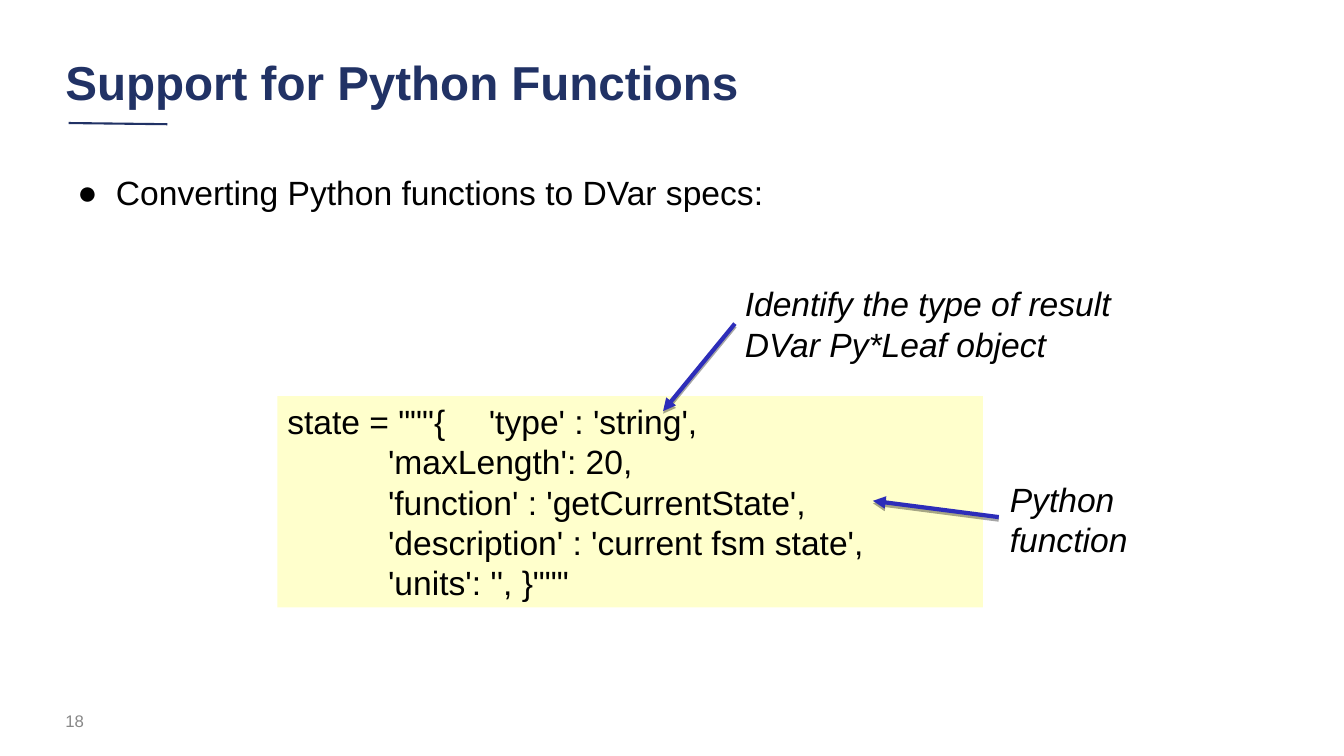
from lxml import etree
from pptx import Presentation
from pptx import util as u
from pptx.dml.color import RGBColor
from pptx.enum import shapes, text
from pptx.oxml import ns

COLORS = {"navy": "213265", "cream": "FFFFCC", "arrow": "2D2DB9",
          "ink": "000000", "gray": "888888"}
CODE_LINES = ["state = \"\"\"{ \t'type' : 'string',",
              "\t'maxLength': 20,",
              "\t'function' : 'getCurrentState',",
              "\t'description' : 'current fsm state',",
              "\t'units': '', }\"\"\""]


def color(name):
    """Return the named palette colour."""
    return RGBColor.from_string(COLORS[name])


def add_xml(parent, tag, **attributes):
    """Append a DrawingML element and return it."""
    return etree.SubElement(parent, ns.qn(tag), attributes)


class SlideBuilder:
    """Holds the text style and the current slide."""

    font_name = "Arial"
    frame_format = {"word_wrap": True, "auto_size": text.MSO_AUTO_SIZE.NONE,
                    "margin_left": u.Cm(0.25), "margin_right": u.Cm(0.25),
                    "margin_top": u.Cm(0.13), "margin_bottom": u.Cm(0.13)}

    def __init__(self, presentation):
        """Add a title-and-content slide."""
        self.slide = presentation.slides.add_slide(presentation.slide_layouts[1])

    def place(self, shape, box):
        """Move and size a shape, in centimetres."""
        for name, value in zip(("left", "top", "width", "height"), box):
            setattr(shape, name, u.Cm(value))

    def fill_text(self, shape, lines, ink="ink", anchor=text.MSO_ANCHOR.TOP,
                  spacing=None, bullet=None, tabs=(), **font):
        """Fill a shape with formatted paragraphs."""
        frame = shape.text_frame
        for name, value in {**self.frame_format, "vertical_anchor": anchor}.items():
            setattr(frame, name, value)
        paragraph_format = {"alignment": text.PP_ALIGN.LEFT,
                            "space_before": u.Pt(0), "line_spacing": spacing}
        font_format = {"name": self.font_name, "size": u.Pt(24), **font}
        for index, line in enumerate(lines):
            paragraph = frame.add_paragraph() if index else frame.paragraphs[0]
            paragraph.add_run().text = line
            properties = paragraph._p.get_or_add_pPr()
            if bullet:
                properties.set("marL", str(u.Cm(1.27)))
                properties.set("indent", str(u.Cm(-0.97)))
                add_xml(add_xml(properties, "a:buClr"), "a:srgbClr", val=COLORS[ink])
                add_xml(properties, "a:buFont", typeface=self.font_name)
                add_xml(properties, "a:buChar", char=bullet)
            if tabs:
                tab_list = add_xml(properties, "a:tabLst")
                for stop in tabs:
                    add_xml(tab_list, "a:tab", pos=str(u.Cm(stop)), algn="l")
            for name, value in paragraph_format.items():
                setattr(paragraph, name, value)
            for run in paragraph.runs:
                for name, value in font_format.items():
                    setattr(run.font, name, value)
                run.font.color.rgb = color(ink)

    def title(self, line, box):
        """Fill the title placeholder."""
        shape = self.slide.shapes.title
        self.place(shape, box)
        self.fill_text(shape, [line], "navy", text.MSO_ANCHOR.MIDDLE, 0.9,
                       size=u.Pt(34), bold=True)

    def bullets(self, lines, box):
        """Fill the body placeholder with a list."""
        shape = self.slide.placeholders[1]
        self.place(shape, box)
        self.fill_text(shape, lines, spacing=0.9, bullet="●")

    def code(self, lines, box):
        """Add a code panel."""
        shape = self.slide.shapes.add_shape(
            shapes.MSO_SHAPE.RECTANGLE, *map(u.Cm, box))
        shape.shadow.inherit = False
        shape.fill.solid()
        shape.fill.fore_color.rgb = color("cream")
        shape.line.fill.background()
        self.fill_text(shape, lines, anchor=text.MSO_ANCHOR.MIDDLE,
                       tabs=(2.54, 5.08))

    def label(self, line, box, **style):
        """Add a text box."""
        shape = self.slide.shapes.add_textbox(*map(u.Cm, box))
        self.fill_text(shape, [line], **style)
        return shape

    def line(self, start, end, ink, width):
        """Add a straight line without a shadow."""
        connector = self.slide.shapes.add_connector(
            shapes.MSO_CONNECTOR.STRAIGHT, *map(u.Cm, start + end))
        connector.line.color.rgb = color(ink)
        connector.line.width = u.Pt(width)
        add_xml(connector._element.spPr, "a:effectLst")
        return connector

    def arrow(self, start, end):
        """Add an arrow with a slight drop shadow."""
        connector = self.line(start, end, "arrow", 3)
        properties = connector._element.spPr
        add_xml(properties.find(ns.qn("a:ln")), "a:tailEnd", type="triangle")
        shadow = add_xml(properties.find(ns.qn("a:effectLst")), "a:outerShdw",
                         dist=str(u.Pt(1.8)), dir="5400000", rotWithShape="0")
        shade = add_xml(shadow, "a:srgbClr", val=COLORS["ink"])
        add_xml(shade, "a:alpha", val="35000")
        return connector


def main():
    """Build and save the slide."""
    presentation = Presentation()
    presentation.slide_width = u.Cm(33.87)
    presentation.slide_height = u.Cm(19.05)
    builder = SlideBuilder(presentation)
    builder.title("Support for Python Functions", (1.4, 1.17, 28.24, 1.93))
    builder.line((1.73, 3.1), (4.22, 3.13), "navy", 1.5)
    builder.bullets(["Converting Python functions to DVar specs:"],
                    (1.4, 4.32, 31.09, 12.09))
    builder.code(CODE_LINES, (6.99, 9.98, 17.78, 5.33))
    builder.arrow((25.17, 13.03), (22, 12.62))
    builder.label("Python function", (25.2, 11.94, 3.81, 2.72), italic=True)
    type_label = builder.label("Identify the type of result DVar Py*Leaf object",
                               (18.52, 7.01, 10.36, 2.29), italic=True)
    builder.arrow((18.52, 8.15), (16.71, 10.36)).begin_connect(type_label, 1)
    builder.label("18", (1.4, 17.65, 7.62, 1.02), ink="gray",
                  anchor=text.MSO_ANCHOR.MIDDLE, size=u.Pt(12))
    presentation.save("out.pptx")


if __name__ == "__main__":
    main()
